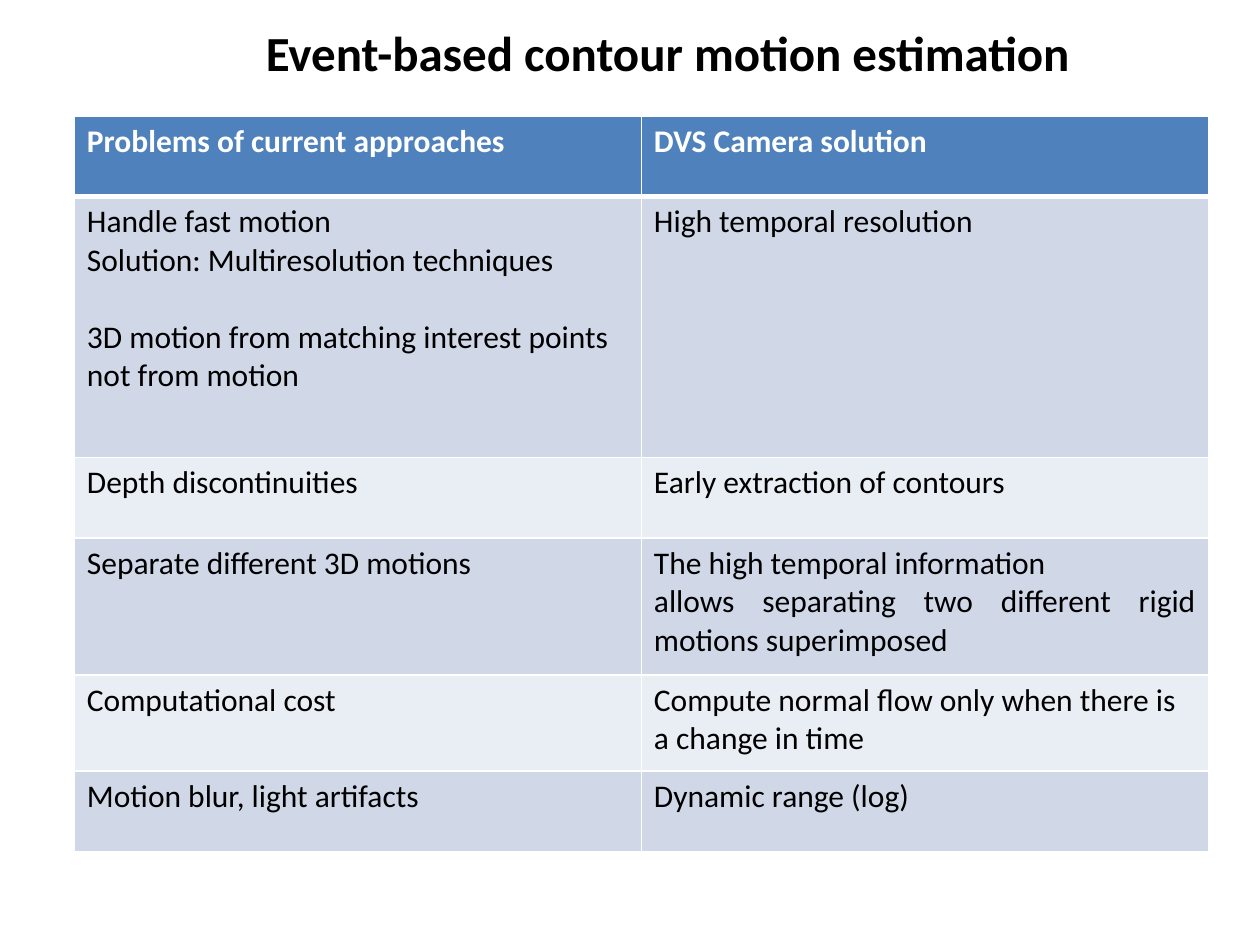
from lxml import etree
from pptx import Presentation
from pptx.dml.color import RGBColor
from pptx.enum import text
from pptx.oxml.ns import qn
from pptx.util import Inches, Pt

FONT = "Calibri"
BLACK = RGBColor(0x00, 0x00, 0x00)
WHITE = RGBColor(0xFF, 0xFF, 0xFF)
HEADER_BLUE = RGBColor(0x4F, 0x81, 0xBD)
BAND_DARK = RGBColor(0xD0, 0xD8, 0xE8)
BAND_LIGHT = RGBColor(0xE9, 0xED, 0xF4)

COLUMN_WIDTH = 4.5
BODY_SIZE = 18
BLANK_LINE = Pt(22)
THIN, THICK = Pt(1), Pt(3)

# Row height in inches, problem, solution
COMPARISON = [
    (0.64, "Problems of current approaches", "DVS Camera solution"),
    (2.07, "Handle fast motion\nSolution: Multiresolution techniques\n"
           "3D motion from matching interest points not from motion",
     "High temporal resolution"),
    (0.64, "Depth discontinuities", "Early extraction of contours"),
    (1.09, "Separate different 3D motions",
     "The high temporal information\n"
     "allows separating two different rigid motions superimposed"),
    (0.76, "Computational cost",
     "Compute normal flow only when there is a change in time"),
    (0.64, "Motion blur, light artifacts", "Dynamic range (log)"),
]


def style_runs(frame, size, color, bold):
    for paragraph in frame.paragraphs:
        for run in paragraph.runs:
            run.font.name = FONT
            run.font.size = Pt(size)
            run.font.bold = bold
            run.font.color.rgb = color


def add_title(slide, wording):
    title = slide.shapes.title
    title.left, title.top = Inches(2.01), Inches(0.13)
    title.width, title.height = Inches(6.67), Inches(0.57)
    frame = title.text_frame
    frame.text = wording
    frame.word_wrap = False
    frame.auto_size = text.MSO_AUTO_SIZE.SHAPE_TO_FIT_TEXT
    frame.vertical_anchor = text.MSO_ANCHOR.TOP
    frame.paragraphs[0].alignment = text.PP_ALIGN.LEFT
    style_runs(frame, 28, BLACK, True)


def add_borders(cell, top, bottom):
    """Draw white rules round a cell; must run before the cell is filled."""
    properties = cell._tc.get_or_add_tcPr()
    for side, width in (("L", THIN), ("R", THIN), ("T", top), ("B", bottom)):
        line = etree.SubElement(properties, qn(f"a:ln{side}"), w=str(width))
        fill = etree.SubElement(line, qn("a:solidFill"))
        etree.SubElement(fill, qn("a:srgbClr"), val=str(WHITE))


def fill_cell(cell, wording, row):
    is_header = row == 0
    cell.text_frame.text = wording
    style_runs(cell.text_frame, BODY_SIZE,
               WHITE if is_header else BLACK, is_header)
    add_borders(cell, THICK if row == 1 else THIN,
                THICK if is_header else THIN)
    cell.fill.solid()
    if is_header:
        cell.fill.fore_color.rgb = HEADER_BLUE
    else:
        cell.fill.fore_color.rgb = BAND_DARK if row % 2 else BAND_LIGHT


def add_comparison(slide):
    height = sum(row_height for row_height, *_ in COMPARISON)
    table = slide.shapes.add_table(
        len(COMPARISON), 2, Inches(0.59), Inches(0.92),
        Inches(2 * COLUMN_WIDTH), Inches(height)).table
    for column in table.columns:
        column.width = Inches(COLUMN_WIDTH)
    for row, (row_height, *entries) in enumerate(COMPARISON):
        table.rows[row].height = Inches(row_height)
        for column, wording in enumerate(entries):
            fill_cell(table.cell(row, column), wording, row)
    return table


def main():
    presentation = Presentation()
    presentation.slide_width = Inches(10)
    presentation.slide_height = Inches(7.5)
    slide = presentation.slides.add_slide(presentation.slide_layouts[5])
    add_title(slide, "Event-based contour motion estimation")
    table = add_comparison(slide)

    fast_motion = table.cell(1, 0).text_frame
    fast_motion.paragraphs[2].space_before = BLANK_LINE
    for paragraph in table.cell(3, 1).text_frame.paragraphs:
        paragraph.alignment = text.PP_ALIGN.JUSTIFY
    presentation.save("out.pptx")


if __name__ == "__main__":
    main()
